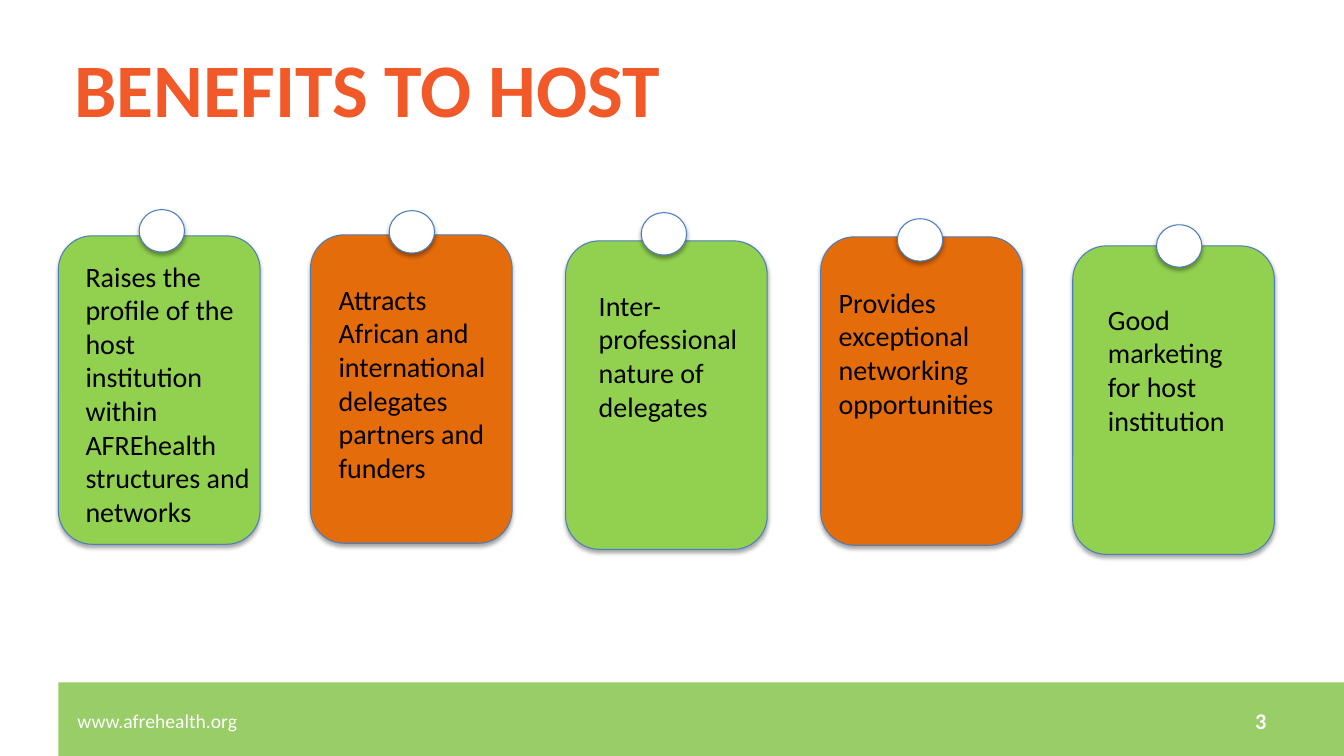
from lxml import etree
from pptx import Presentation
from pptx.dml.color import RGBColor
from pptx.enum.shapes import MSO_SHAPE
from pptx.enum.text import MSO_ANCHOR, PP_ALIGN
from pptx.oxml.ns import qn
from pptx.util import Inches, Pt

RECT, ROUNDED, OVAL = MSO_SHAPE.RECTANGLE, MSO_SHAPE.ROUNDED_RECTANGLE, MSO_SHAPE.OVAL
TOP, MIDDLE = MSO_ANCHOR.TOP, MSO_ANCHOR.MIDDLE
LEFT, RIGHT = PP_ALIGN.LEFT, PP_ALIGN.RIGHT
WHITE = RGBColor(0xFF, 0xFF, 0xFF)
BLACK = RGBColor(0, 0, 0)
TITLE = RGBColor(0xF1, 0x59, 0x28)
BAND = RGBColor(0x98, 0xCD, 0x67)
GREEN = RGBColor(0x92, 0xD0, 0x50)
ORANGE = RGBColor(0xE4, 0x6C, 0x0A)
OUTLINE = RGBColor(0x4B, 0x7E, 0xBC)
FONT = "Calibri"
SLIDE_W, SLIDE_H = 13.33, 7.5
CARD_W, CARD_H = 2, 3.06
PIN_W, PIN_H = 0.45, 0.42

# card left, card top, pin left, pin top, text left, text top, text width, text height, wording
CARDS = [
    (0.58, 2.34, 1.38, 2.08, 0.75, 2.52, 1.83, 2.79,
     "Raises the profile of the host institution within AFREhealth structures and networks"),
    (3.08, 2.33, 3.86, 2.09, 3.26, 2.75, 1.67, 2.12,
     "Attracts African and international delegates partners and funders"),
    (5.61, 2.39, 6.36, 2.11, 5.84, 2.81, 1.63, 1.45,
     "Inter-professional nature of delegates"),
    (8.14, 2.35, 8.9, 2.17, 8.22, 2.78, 1.79, 1.45,
     "Provides exceptional networking opportunities"),
    (10.64, 2.44, 11.47, 2.23, 10.89, 2.95, 1.61, 1.45,
     "Good marketing for host institution"),
]


def box(x, y, w, h):
    """Convert a box in inches to slide lengths."""
    return [Inches(v) for v in (x, y, w, h)]


def add_run(p, text, size, color, bold=False):
    """Add one formatted run to a paragraph."""
    r = p.add_run()
    r.text = text
    r.font.name, r.font.size, r.font.bold = FONT, Pt(size), bold
    r.font.color.rgb = color


def add_title(s, text):
    """Place and fill the title placeholder."""
    sp = s.shapes.title
    sp.left, sp.top, sp.width, sp.height = box(0.64, 0.33, 12, 1.18)
    tf = sp.text_frame
    tf.vertical_anchor = MIDDLE
    p = tf.paragraphs[0]
    p.alignment, p.line_spacing = LEFT, 0.9
    add_run(p, text, 54, TITLE, True)


def add_text(s, place, text, size, color, anchor=TOP, align=LEFT, bold=False):
    """Add a wrapping text box with one paragraph."""
    tf = s.shapes.add_textbox(*box(*place)).text_frame
    tf.word_wrap = True
    tf.vertical_anchor = anchor
    p = tf.paragraphs[0]
    p.alignment = align
    add_run(p, text, size, color, bold)


def add_shape(s, kind, place, fill):
    """Add a filled shape without line or shadow."""
    sp = s.shapes.add_shape(kind, *box(*place))
    sp.shadow.inherit = False
    sp.fill.solid()
    sp.fill.fore_color.rgb = fill
    sp.line.fill.background()
    return sp


def add_raised(s, kind, place, fill):
    """Add an outlined shape with a soft shadow below it."""
    sp = add_shape(s, kind, place, fill)
    sp.line.color.rgb = OUTLINE
    sp.line.width = Pt(0.75)
    effects = sp.element.spPr.find(qn("a:effectLst"))
    shadow = etree.SubElement(effects, qn("a:outerShdw"), blurRad=str(Pt(3.1)),
                              dist=str(Pt(1.8)), dir="5400000", rotWithShape="0")
    color = etree.SubElement(shadow, qn("a:srgbClr"), val=str(BLACK))
    etree.SubElement(color, qn("a:alpha"), val="35000")


def add_footer(s):
    """Add the green band with the web address and the page number."""
    add_shape(s, RECT, (0.58, 6.77, SLIDE_W - 0.58, SLIDE_H - 6.77), BAND)
    add_text(s, (0.67, 6.95, 1.83, 0.4), "www.afrehealth.org", 14, WHITE, MIDDLE)
    add_text(s, (11.83, 6.95, 0.83, 0.4), "3", 16, WHITE, MIDDLE, RIGHT, True)


def main():
    """Build and save the slide."""
    prs = Presentation()
    prs.slide_width, prs.slide_height = Inches(SLIDE_W), Inches(SLIDE_H)
    s = prs.slides.add_slide(prs.slide_layouts[5])
    add_title(s, "BENEFITS TO HOST")
    add_footer(s)
    for i, (x, y, pin_x, pin_y, *place, text) in enumerate(CARDS):
        add_raised(s, ROUNDED, (x, y, CARD_W, CARD_H), ORANGE if i % 2 else GREEN)
        add_raised(s, OVAL, (pin_x, pin_y, PIN_W, PIN_H), WHITE)
        add_text(s, place, text, 20, BLACK)
    prs.save("out.pptx")


if __name__ == "__main__":
    main()
